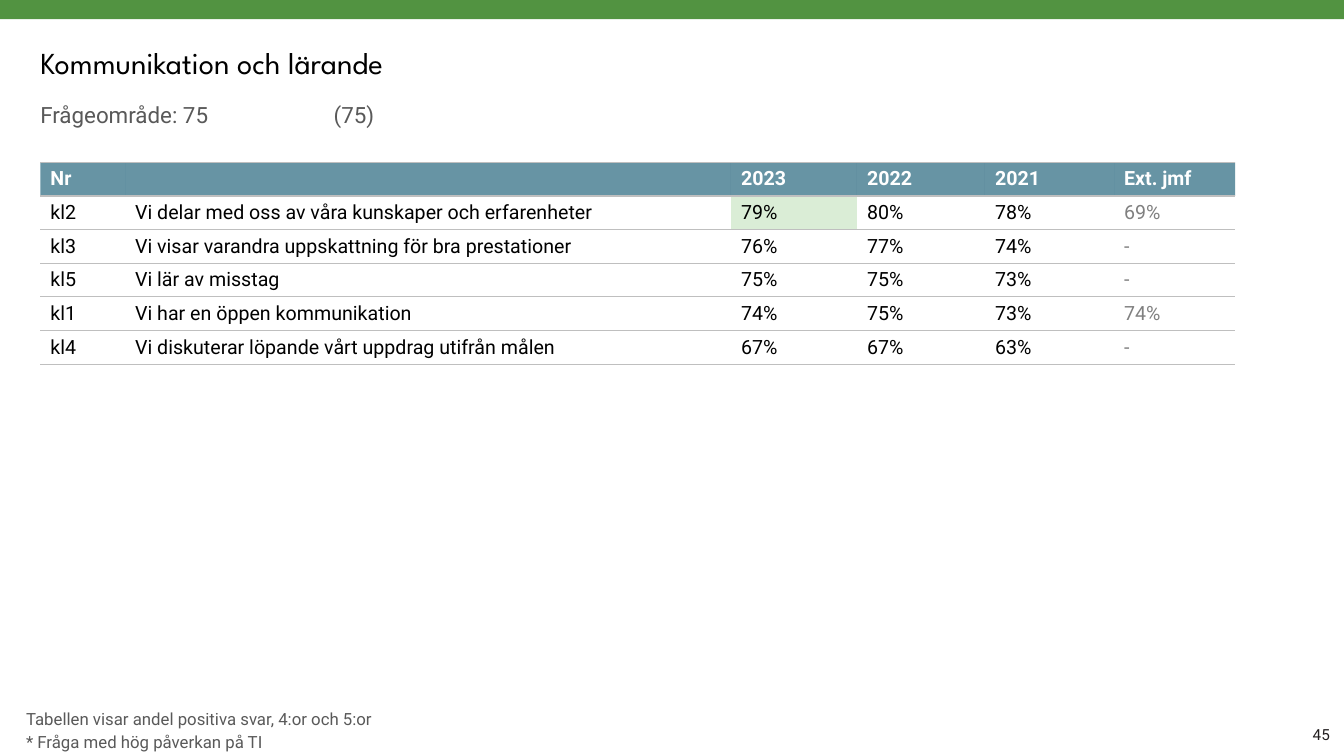
from lxml import etree
from pptx import Presentation
from pptx.dml.color import RGBColor
from pptx.enum.shapes import MSO_SHAPE
from pptx.enum.text import MSO_ANCHOR, PP_ALIGN
from pptx.oxml.ns import qn
from pptx.util import Inches, Pt

RECTANGLE = MSO_SHAPE.RECTANGLE
MIDDLE = MSO_ANCHOR.MIDDLE
LEFT, RIGHT = PP_ALIGN.LEFT, PP_ALIGN.RIGHT

BODY_FONT, TITLE_FONT = "Roboto", "League Spartan"
GREEN, LIGHT_GREEN, TEAL = "529341", "DAEDD6", "427A8E"
BLACK, WHITE, INK = "000000", "FFFFFF", "231F20"
DARK_GREY, GREY, RULE_GREY = "595959", "808080", "BFBFBF"

QUESTION_COLUMNS = [0.84, 6.01, 1.25, 1.27, 1.28, 1.2]
QUESTION_ROWS = [
    ["Nr", "", "2023", "2022", "2021", "Ext. jmf"],
    ["kl2", "Vi delar med oss av våra kunskaper och erfarenheter", "79%", "80%", "78%", "69%"],
    ["kl3", "Vi visar varandra uppskattning för bra prestationer", "76%", "77%", "74%", "-"],
    ["kl5", "Vi lär av misstag", "75%", "75%", "73%", "-"],
    ["kl1", "Vi har en öppen kommunikation", "74%", "75%", "73%", "74%"],
    ["kl4", "Vi diskuterar löpande vårt uppdrag utifrån målen", "67%", "67%", "63%", "-"],
]
HIGHLIGHTED_CELL = (1, 2)
EXTERNAL_COLUMN = 5


def rgb(value):
    return RGBColor.from_string(value)


def add_run(paragraph, text, size, color, font=BODY_FONT, bold=False):
    run = paragraph.add_run()
    run.text = text
    run.font.size = Pt(size)
    run.font.name = font
    run.font.bold = bold
    run.font.color.rgb = rgb(color)


def add_text(slide, box, lines, size, color, font=BODY_FONT, align=LEFT, insets=(0, 0), gap=0):
    frame = slide.shapes.add_textbox(*map(Inches, box)).text_frame
    frame.word_wrap = True
    frame.margin_left = frame.margin_right = Inches(insets[0])
    frame.margin_top = frame.margin_bottom = Inches(insets[1])
    for index, line in enumerate(lines):
        paragraph = frame.add_paragraph() if index else frame.paragraphs[0]
        paragraph.alignment = align
        if index:
            paragraph.space_before = Pt(gap)
        add_run(paragraph, line, size, color, font)


def add_top_band(slide):
    band = slide.shapes.add_shape(RECTANGLE, 0, Inches(-0.02), Inches(13.33), Inches(0.21))
    band.shadow.inherit = False
    band.fill.solid()
    band.fill.fore_color.rgb = rgb(GREEN)
    band.line.fill.background()


def set_borders(cell, ruled):
    properties = cell._tc.get_or_add_tcPr()
    for side in ("lnL", "lnR", "lnT", "lnB"):
        line = etree.SubElement(properties, qn(f"a:{side}"), w=str(Pt(1)))
        if side in ruled:
            fill = etree.SubElement(line, qn("a:solidFill"))
            etree.SubElement(fill, qn("a:srgbClr"), val=RULE_GREY)
        else:
            etree.SubElement(line, qn("a:noFill"))


def set_fill(cell, color, opacity=100):
    if color is None:
        cell.fill.background()
        return
    cell.fill.solid()
    cell.fill.fore_color.rgb = rgb(color)
    if opacity < 100:
        shade = cell._tc.tcPr.find(qn("a:solidFill")).find(qn("a:srgbClr"))
        etree.SubElement(shade, qn("a:alpha"), val=str(opacity * 1000))


def set_cell_text(cell, text, size, color, bold=False):
    cell.vertical_anchor = MIDDLE
    paragraph = cell.text_frame.paragraphs[0]
    if text:
        add_run(paragraph, text, size, color, bold=bold)
    else:
        etree.SubElement(paragraph._p, qn("a:endParaRPr"), sz=str(size * 100))


def add_plain_table(slide, left, top, columns, row_count, row_height):
    table = slide.shapes.add_table(
        row_count, len(columns), Inches(left), Inches(top),
        Inches(sum(columns)), Inches(row_count * row_height)).table
    table.first_row = table.horz_banding = False
    for column, width in zip(table.columns, columns):
        column.width = Inches(width)
    for row in table.rows:
        row.height = Inches(row_height)
    return table


def add_score_table(slide):
    table = add_plain_table(slide, 0.4, 0.8, [2.91, 2.34], 1, 0.7)
    for cell, text in zip(table.iter_cells(), ["Frågeområde: 75", "(75)"]):
        cell.margin_left = cell.margin_right = cell.margin_top = cell.margin_bottom = 0
        set_borders(cell, ())
        set_fill(cell, None)
        set_cell_text(cell, text, 16, DARK_GREY)


def add_question_table(slide):
    table = add_plain_table(slide, 0.4, 1.61, QUESTION_COLUMNS, len(QUESTION_ROWS), 0.33)
    for row, texts in enumerate(QUESTION_ROWS):
        for column, text in enumerate(texts):
            cell = table.cell(row, column)
            set_borders(cell, ("lnT", "lnB"))
            if row == 0:
                set_fill(cell, TEAL, 80)
                set_cell_text(cell, text, 14, WHITE, bold=True)
            else:
                set_fill(cell, LIGHT_GREEN if (row, column) == HIGHLIGHTED_CELL else None)
                set_cell_text(cell, text, 14, GREY if column == EXTERNAL_COLUMN else BLACK)


def main():
    presentation = Presentation()
    presentation.slide_width = Inches(13.33)
    presentation.slide_height = Inches(7.5)
    slide = presentation.slides.add_slide(presentation.slide_layouts[6])
    add_top_band(slide)
    add_text(slide, (0.4, 0.44, 7.96, 0.37), ["Kommunikation och lärande"], 21.8, BLACK, TITLE_FONT)
    add_score_table(slide)
    add_question_table(slide)
    footnotes = ["Tabellen visar andel positiva svar, 4:or och 5:or", "* Fråga med hög påverkan på TI"]
    add_text(slide, (0.16, 6.98, 5.4, 0.55), footnotes, 12, DARK_GREY, insets=(0.1, 0.05), gap=2.4)
    add_text(slide, (12.49, 7.19, 0.7, 0.18), ["45"], 10.9, INK, align=RIGHT)
    presentation.save("out.pptx")


if __name__ == "__main__":
    main()
